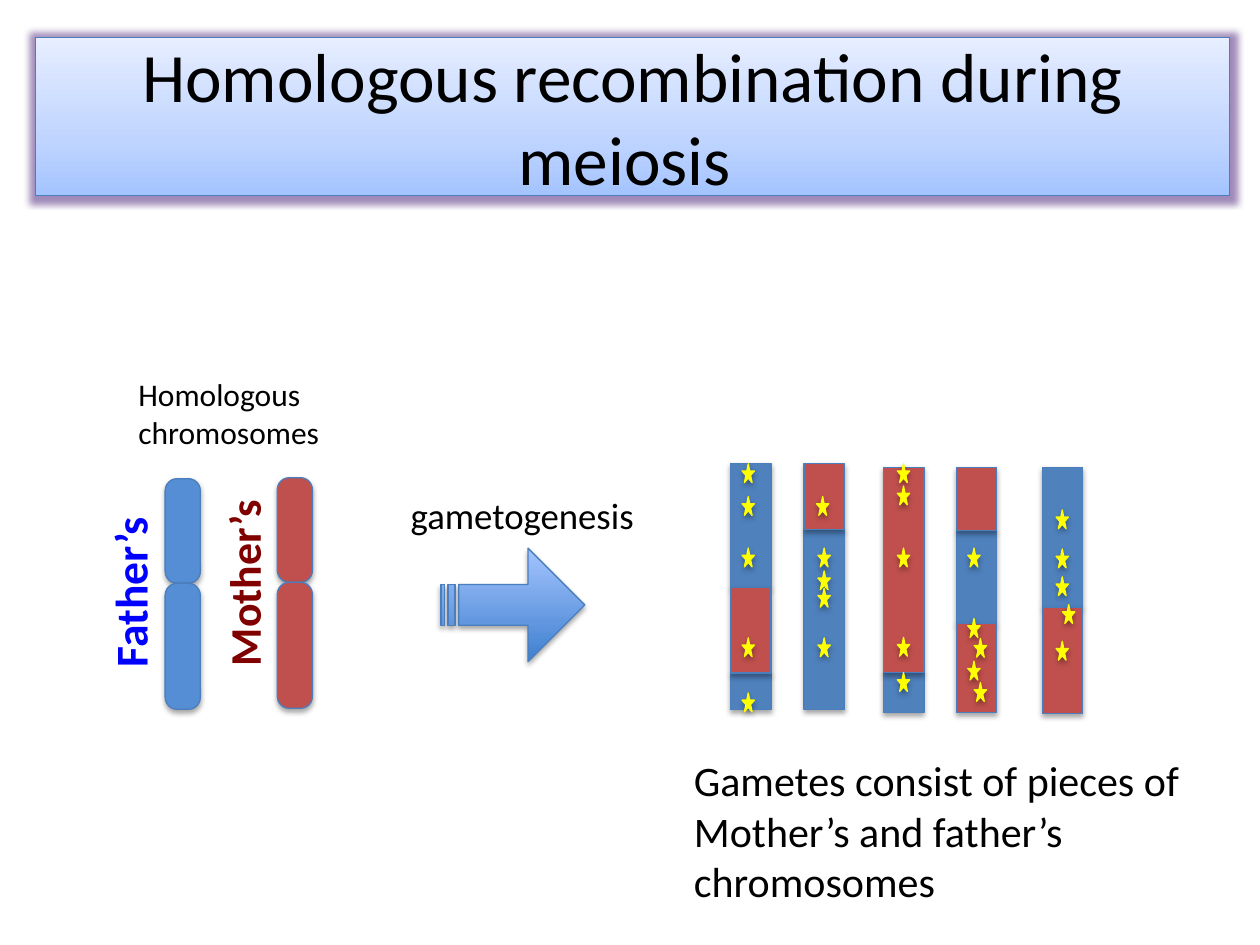
import copy

import pptx
import pptx.dml.color
import pptx.enum.shapes
import pptx.enum.text
import pptx.oxml
import pptx.oxml.ns
import pptx.util

Cm = pptx.util.Cm
Pt = pptx.util.Pt
RGBColor = pptx.dml.color.RGBColor
Shape = pptx.enum.shapes.MSO_SHAPE
Align = pptx.enum.text.PP_ALIGN
Anchor = pptx.enum.text.MSO_ANCHOR
AutoSize = pptx.enum.text.MSO_AUTO_SIZE
qn = pptx.oxml.ns.qn

BLACK = RGBColor(0x00, 0x00, 0x00)
OUTLINE = RGBColor(0x4B, 0x7E, 0xBC)
FATHER = RGBColor(0x55, 0x8E, 0xD5)
FATHER_TEXT = RGBColor(0x00, 0x00, 0xFF)
MOTHER_TEXT = RGBColor(0x80, 0x00, 0x00)
BLUE = RGBColor(0x4F, 0x81, 0xBD)
RED = RGBColor(0xC0, 0x50, 0x4D)
YELLOW = RGBColor(0xFF, 0xFF, 0x00)
GLOW = RGBColor(0x80, 0x64, 0xA2)
PALE = RGBColor(0xE6, 0xEE, 0xFF)
LIGHT = RGBColor(0xBF, 0xD4, 0xFF)
SKY = RGBColor(0xA4, 0xC4, 0xFF)
DEEP = RGBColor(0x3F, 0x80, 0xCE)

BAR_WIDTH = 1.06 / 1.3
STAR_WIDTH, STAR_HEIGHT = 0.25, 0.38

# Each gamete: left, top, pieces (colour, length), crossovers (left, top);
# its offsets are measured from the gamete area or the bar's own corner.
GAMETES = [
    (0, 0, [(BLUE, 2.49), (RED, 1.73), (BLUE, 0.74)],
     [(0.23, 0), (0.23, 0.66), (0.23, 1.7), (0.23, 3.51), (0.23, 4.62)]),
    (1.48, 0, [(RED, 1.33), (BLUE, 3.63)],
     [(0.25, 0.66), (0.28, 1.7), (0.28, 2.16), (0.28, 2.51), (0.28, 3.51)]),
    (3.08, 0.07, [(RED, 4.14), (BLUE, 0.81)],
     [(0.28, -0.07), (0.28, 0.38), (0.28, 1.63), (0.28, 3.43), (0.28, 4.14)]),
    (4.55, 0.07, [(RED, 1.27), (BLUE, 1.88), (RED, 1.8)],
     [(0.23, 1.63), (0.23, 3.05), (0.36, 3.45), (0.23, 3.91), (0.36, 4.34)]),
    (6.28, 0.07, [(BLUE, 2.83), (RED, 2.13)],
     [(0.28, 0.86), (0.28, 1.65), (0.28, 2.21), (0.41, 2.77), (0.28, 3.51)]),
]


def add_effect(shape, tag, color, alpha, **attributes):
    shape.shadow.inherit = False
    effects = shape._element.spPr.find(qn("a:effectLst"))
    values = " ".join(f'{name}="{value}"' for name, value in attributes.items())
    effects.append(pptx.oxml.parse_xml(
        f'<a:{tag} {pptx.oxml.ns.nsdecls("a")} {values}>'
        f'<a:srgbClr val="{color}"><a:alpha val="{alpha * 1000}"/></a:srgbClr>'
        f'</a:{tag}>'))


def fill_gradient(shape, *stops):
    """Fill upwards from the first (position, colour) stop to the last."""
    shape.fill.gradient()
    shape.fill.gradient_angle = 90
    stop_list = shape._element.spPr.find(".//" + qn("a:gsLst"))
    while len(stop_list) < len(stops):
        stop_list.append(copy.deepcopy(stop_list[-1]))
    for stop, (position, color) in zip(shape.fill.gradient_stops, stops):
        stop.position = position
        stop.color.rgb = color


def set_outline(shape, color=OUTLINE):
    shape.line.color.rgb = color
    shape.line.width = Pt(0.75)


def add_figure(shapes, kind, box, color=None, outline=OUTLINE):
    """Add a preset shape with a thin outline and a soft shadow below it."""
    shape = shapes.add_shape(kind, *map(Cm, box))
    if color is not None:
        shape.fill.solid()
        shape.fill.fore_color.rgb = color
    set_outline(shape, outline)
    add_effect(shape, "outerShdw", BLACK, 35, blurRad=Pt(3.1), dist=Pt(1.8),
               dir=5400000, rotWithShape=0)
    return shape


def write(shape, text, size=18, color=BLACK, bold=False, align=Align.LEFT):
    """Write each line of text as a paragraph."""
    frame = shape.text_frame
    for index, line in enumerate(text.split("\n")):
        para = frame.add_paragraph() if index else frame.paragraphs[0]
        para.alignment = align
        span = para.add_run()
        span.text = line
        span.font.name = "Calibri"
        span.font.size = Pt(size)
        span.font.bold = bold
        span.font.color.rgb = color


def add_label(page, box, text, rotation=0, **style):
    label = page.shapes.add_textbox(*map(Cm, box))
    label.rotation = rotation
    label.text_frame.word_wrap = False
    label.text_frame.auto_size = AutoSize.SHAPE_TO_FIT_TEXT
    write(label, text, **style)


def place_title(page, box):
    title = page.shapes.title
    title.left, title.top, title.width, title.height = map(Cm, box)
    fill_gradient(title, (0, SKY), (0.35, LIGHT), (1, PALE))
    set_outline(title)
    add_effect(title, "glow", GLOW, 75, rad=Pt(8))
    title.text_frame.word_wrap = True
    title.text_frame.auto_size = AutoSize.NONE
    title.text_frame.vertical_anchor = Anchor.MIDDLE
    write(title, "Homologous recombination during meiosis ", size=39.6,
          align=Align.CENTER)


def draw_chromosome(page, left, top, color):
    for offset, length in ((0, 2.11), (2.11, 2.54)):
        arm = add_figure(page.shapes, Shape.ROUNDED_RECTANGLE,
                         (left, top + offset, 0.71, length), color)
        arm.adjustments[0] = 0.34


def draw_parents(page, left, top):
    draw_chromosome(page, left + 2.49, top + 2.21, FATHER)
    draw_chromosome(page, left + 4.75, top + 2.19, RED)
    add_label(page, (left + 2.13, top + 3.63, 3.89, 1.32), "Mother’s",
              rotation=270, size=25, color=MOTHER_TEXT, bold=True)
    add_label(page, (left, top + 3.79, 3.56, 1.37), "Father’s",
              rotation=270, size=26, color=FATHER_TEXT, bold=True)
    add_label(page, (left + 1.7, top, 4.19, 1.8), "Homologous\nchromosomes")


def draw_gametogenesis(page, left, top):
    arrow = add_figure(page.shapes, Shape.STRIPED_RIGHT_ARROW,
                       (left + 0.86, top + 1.25, 2.9, 2.29))
    arrow.adjustments[0] = 0.36
    arrow.adjustments[1] = 0.5
    fill_gradient(arrow, (0, DEEP), (1, SKY))
    add_label(page, (left, top, 5.05, 1.14), "gametogenesis", size=21)


def draw_gametes(page, left, top):
    group = page.shapes.add_group_shape()
    for layer in (BLUE, RED):
        for bar_left, bar_top, pieces, _ in GAMETES:
            piece_top = top + bar_top
            for color, length in pieces:
                if color == layer:
                    add_figure(group.shapes, Shape.RECTANGLE,
                               (left + bar_left, piece_top, BAR_WIDTH, length),
                               color)
                piece_top += length
    for bar_left, bar_top, _, crossovers in GAMETES:
        for star_left, star_top in crossovers:
            add_figure(group.shapes, Shape.STAR_5_POINT,
                       (left + bar_left + star_left, top + bar_top + star_top,
                        STAR_WIDTH, STAR_HEIGHT), YELLOW, YELLOW)
    add_label(page, (left - 0.99, top + 5.74, 10.39, 3.33),
              "Gametes consist of pieces of\nMother’s and father’s\nchromosomes",
              size=24)


def main():
    deck = pptx.Presentation()
    deck.slide_width, deck.slide_height = Cm(25.4), Cm(19.05)
    page = deck.slides.add_slide(deck.slide_layouts[5])
    place_title(page, (0.71, 0.76, 24.08, 3.18))
    draw_parents(page, 0.84, 7.44)
    draw_gametogenesis(page, 8.03, 9.8)
    draw_gametes(page, 14.73, 9.35)
    deck.save("out.pptx")


if __name__ == "__main__":
    main()
